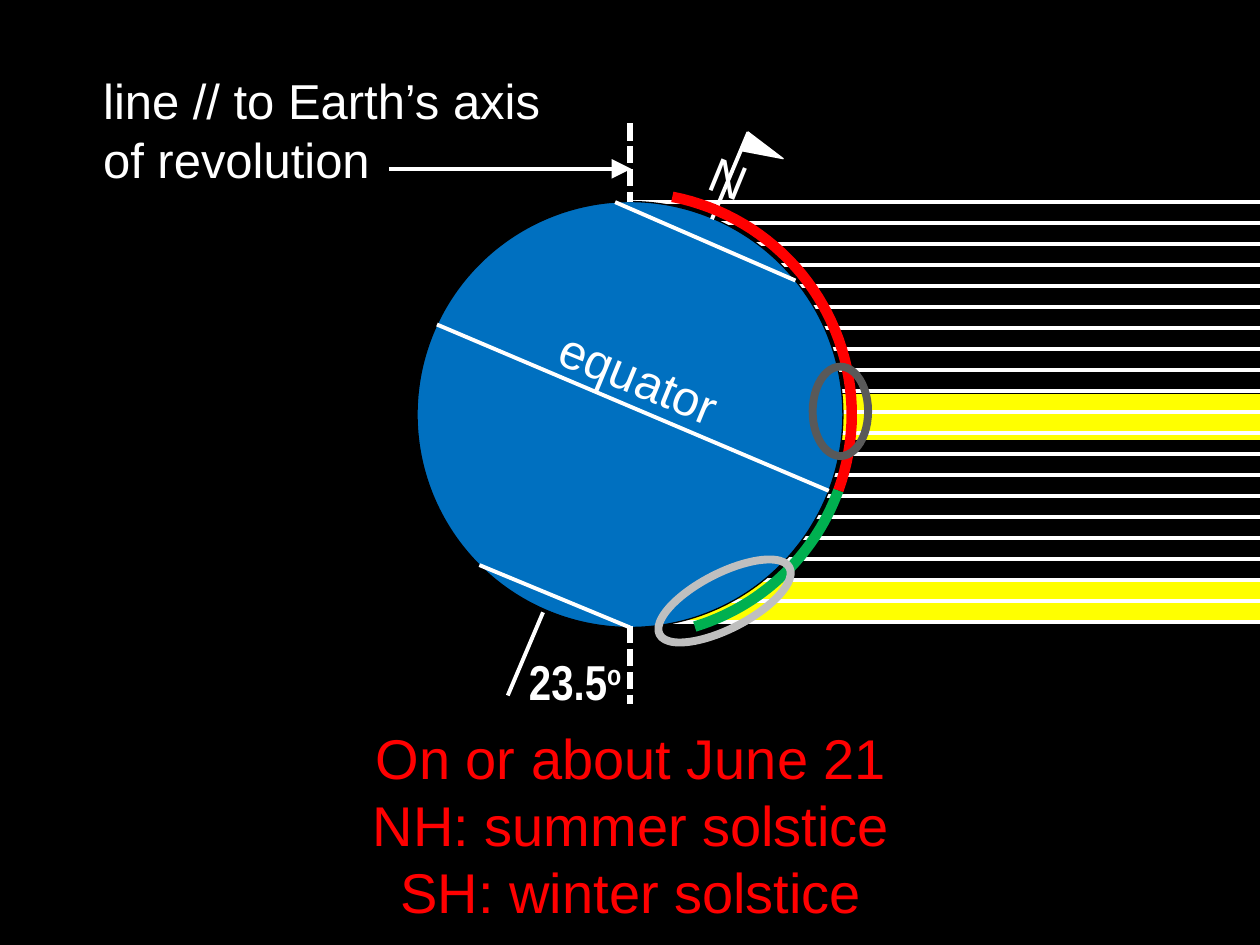
from dataclasses import dataclass
from math import cos, radians, sin

from lxml.etree import SubElement
from pptx import Presentation
from pptx.dml.color import RGBColor
from pptx.enum.dml import MSO_LINE_DASH_STYLE as Dash
from pptx.enum.shapes import MSO_CONNECTOR as Connector, MSO_SHAPE as Shape
from pptx.enum.text import MSO_ANCHOR as Anchor, MSO_AUTO_SIZE as AutoSize, PP_ALIGN as Align
from pptx.oxml.ns import qn
from pptx.util import Inches, Pt


@dataclass(frozen=True)
class Theme:
    """Colours, fonts, type sizes and line widths of the slide."""
    night: str = "000000"
    white: str = "FFFFFF"
    sun: str = "FFFF00"
    ocean: str = "0070C0"
    summer: str = "FF0000"
    winter: str = "00B050"
    direct: str = "595959"
    slanted: str = "BFBFBF"
    sans: str = "Arial"
    narrow: str = "Arial Narrow"
    label: float = 28
    caption: float = 32
    hairline: float = 0.75
    thin: float = 2.25
    dashed: float = 3.25
    ring: float = 4.5
    arc: float = 6


@dataclass(frozen=True)
class Box:
    """A region in inches, inside which parts are placed by offset."""
    left: float
    top: float
    width: float
    height: float

    def inner(self, dx, dy, width, height):
        """Return a box offset from this one."""
        return Box(self.left + dx, self.top + dy, width, height)

    def point(self, dx, dy):
        """Return an offset point as lengths."""
        return Inches(self.left + dx), Inches(self.top + dy)

    def rim(self, degrees, margin=0):
        """Return the offset on the inscribed circle, clockwise from the right."""
        radius, angle = self.width / 2, radians(degrees)
        return (radius + (radius + margin) * cos(angle),
                radius + (radius + margin) * sin(angle))

    def frame(self):
        """Return left, top, width and height as lengths."""
        return tuple(map(Inches, (self.left, self.top, self.width, self.height)))


THEME = Theme()
TILT = 22.3


def apply(target, values):
    """Set each format value on the target."""
    for name, value in values.items():
        setattr(target, name, value)


def paint(shape, fill, line, width):
    """Give a shape its fill and outline, without a shadow."""
    shape.shadow.inherit = False
    if fill:
        shape.fill.solid()
        shape.fill.fore_color.rgb = RGBColor.from_string(fill)
    else:
        shape.fill.background()
    shape.line.color.rgb = RGBColor.from_string(line)
    shape.line.width = Pt(width)


def add_figure(slide, kind, box, fill, line=THEME.night, width=THEME.hairline, rotation=0):
    """Add a preset shape."""
    figure = slide.shapes.add_shape(kind, *box.frame())
    paint(figure, fill, line, width)
    figure.rotation = rotation


def add_line(slide, box, start, end, width=THEME.thin, dash=None, arrow=False):
    """Add a white line between two offsets in the box."""
    line = slide.shapes.add_connector(Connector.STRAIGHT, *box.point(*start), *box.point(*end))
    line.line.color.rgb = RGBColor.from_string(THEME.white)
    apply(line.line, {"width": Pt(width), "dash_style": dash})
    properties = line.element.spPr
    if arrow:
        SubElement(properties.get_or_add_ln(), qn("a:tailEnd"), type="triangle", w="lg", len="lg")
    SubElement(properties, qn("a:effectLst"))


def add_text(slide, box, lines, color=THEME.white, size=THEME.label, font=THEME.sans,
             bold=False, align=Align.LEFT, rotation=0, superscript=None):
    """Add unwrapped text, one paragraph for each line."""
    label = slide.shapes.add_textbox(*box.frame())
    label.rotation = rotation
    frame = label.text_frame
    apply(frame, {"word_wrap": False, "auto_size": AutoSize.SHAPE_TO_FIT_TEXT,
                  "vertical_anchor": Anchor.MIDDLE})
    frame.text = "\n".join(lines)
    if superscript:
        raised = frame.paragraphs[-1].add_run()
        raised.text = superscript
        raised._r.get_or_add_rPr().set("baseline", "30000")
    for paragraph in frame.paragraphs:
        paragraph.alignment = align
        for run in paragraph.runs:
            apply(run.font, {"name": font, "size": Pt(size), "bold": bold})
            run.font.color.rgb = RGBColor.from_string(color)


def add_rim_arc(slide, globe, first, last, color, margin=0.07, steps=40):
    """Add a thick arc just outside the globe between two angles."""
    turn = (last - first) / steps
    start, *rest = [globe.point(*globe.rim(first + step * turn, margin))
                    for step in range(steps + 1)]
    builder = slide.shapes.build_freeform(*start)
    builder.add_line_segments(rest, close=False)
    paint(builder.convert_to_shape(), None, color, THEME.arc)


def draw_sunlight(slide, box):
    """Draw two yellow beams and evenly spaced rays that start behind the globe."""
    beam_height, ray_gap = 0.38, 1 / 6
    for left, top in ((1.44, 1.52), (0.35, 2.98)):
        beam = box.inner(left, top, box.width - left, beam_height)
        add_figure(slide, Shape.RECTANGLE, beam, THEME.sun)
    ray_groups = [(10, 0, ray_gap), (2, 1.59, 0), (3, 1.06, ray_gap),
                  (3, 0.78, ray_gap), (3, 0.8, -0.25)]
    starts = [first + place * shift
              for count, first, shift in ray_groups for place in range(count)]
    for row, start in enumerate(starts):
        height = row * ray_gap
        add_line(slide, box, (start, height), (box.width, height))


def draw_revolution_label(slide, box):
    """Write the label of the upright line and point at it."""
    arrow_height = 0.83
    add_text(slide, box, ["line // to Earth’s axis", "of revolution"])
    add_line(slide, box, (2.37, arrow_height), (4.29, arrow_height), arrow=True)


def draw_axis(slide, box):
    """Draw the upright dashes, the tilted axis with its flag and the tilt angle."""
    upright, dash_length = 0.97, 0.62
    for top in (0, box.height - dash_length):
        add_line(slide, box, (upright, top), (upright, top + dash_length),
                 THEME.dashed, Dash.SQUARE_DOT)
    north_end, south_end = ((1.91, 0.07), (1.62, 0.76)), ((0.28, 3.88), (0, 4.54))
    for start, end in (north_end, south_end):
        add_line(slide, box, start, end)
    add_text(slide, box.inner(1.52, 0.14, 0.49, 0.57), ["N"], rotation=TILT)
    add_figure(slide, Shape.ISOSCELES_TRIANGLE, box.inner(1.95, 0.04, 0.16, 0.34),
               THEME.white, THEME.white, rotation=114)
    add_text(slide, box.inner(0.07, 4.14, 0.96, 0.57), ["23.5"], font=THEME.narrow,
             bold=True, superscript="o")


def draw_seasons(slide, globe):
    """Draw the season arcs, latitude chords and rings over the globe."""
    season_border, winter_end, summer_end = 20, 73, -79
    for end, color in ((winter_end, THEME.winter), (summer_end, THEME.summer)):
        add_rim_arc(slide, globe, season_border, end, color)
    equator, antarctic_circle, arctic_circle = (205, 21), (135, 90), (-94, -39)
    for west, east in (equator, antarctic_circle, arctic_circle):
        add_line(slide, globe, globe.rim(west), globe.rim(east))
    add_text(slide, globe.inner(1.01, 1.11, 1.54, 0.57), ["equator"], rotation=TILT)
    direct_ring, slanted_ring = (3.14, 1.31, 0.44, 0.71), (2.22, 2.59, 0.44, 1.16)
    for ring, color, rotation in ((direct_ring, THEME.direct, 0),
                                  (slanted_ring, THEME.slanted, 62.8)):
        add_figure(slide, Shape.OVAL, globe.inner(*ring), None, color, THEME.ring, rotation)


def draw_caption(slide, box):
    """Write the date and the solstice of each hemisphere."""
    add_text(slide, box, ["On or about June 21", "NH: summer solstice", "SH: winter solstice"],
             THEME.summer, THEME.caption, align=Align.CENTER)


def main():
    """Build and save the solstice slide."""
    deck = Presentation()
    apply(deck, {"slide_width": Inches(10), "slide_height": Inches(7.5)})
    slide = deck.slides.add_slide(deck.slide_layouts[6])
    slide.background.fill.solid()
    slide.background.fill.fore_color.rgb = RGBColor.from_string(THEME.night)
    globe = Box(3.31, 1.6, 3.38, 3.38)
    draw_sunlight(slide, Box(5, 1.6, 5.25, 3.38))
    draw_revolution_label(slide, Box(0.72, 0.51, 3.82, 1.04))
    add_figure(slide, Shape.OVAL, globe, THEME.ocean)
    draw_axis(slide, Box(4.03, 0.98, 2.11, 4.61))
    draw_caption(slide, Box(2.84, 5.68, 4.34, 1.72))
    draw_seasons(slide, globe)
    deck.save("out.pptx")


if __name__ == "__main__":
    main()
